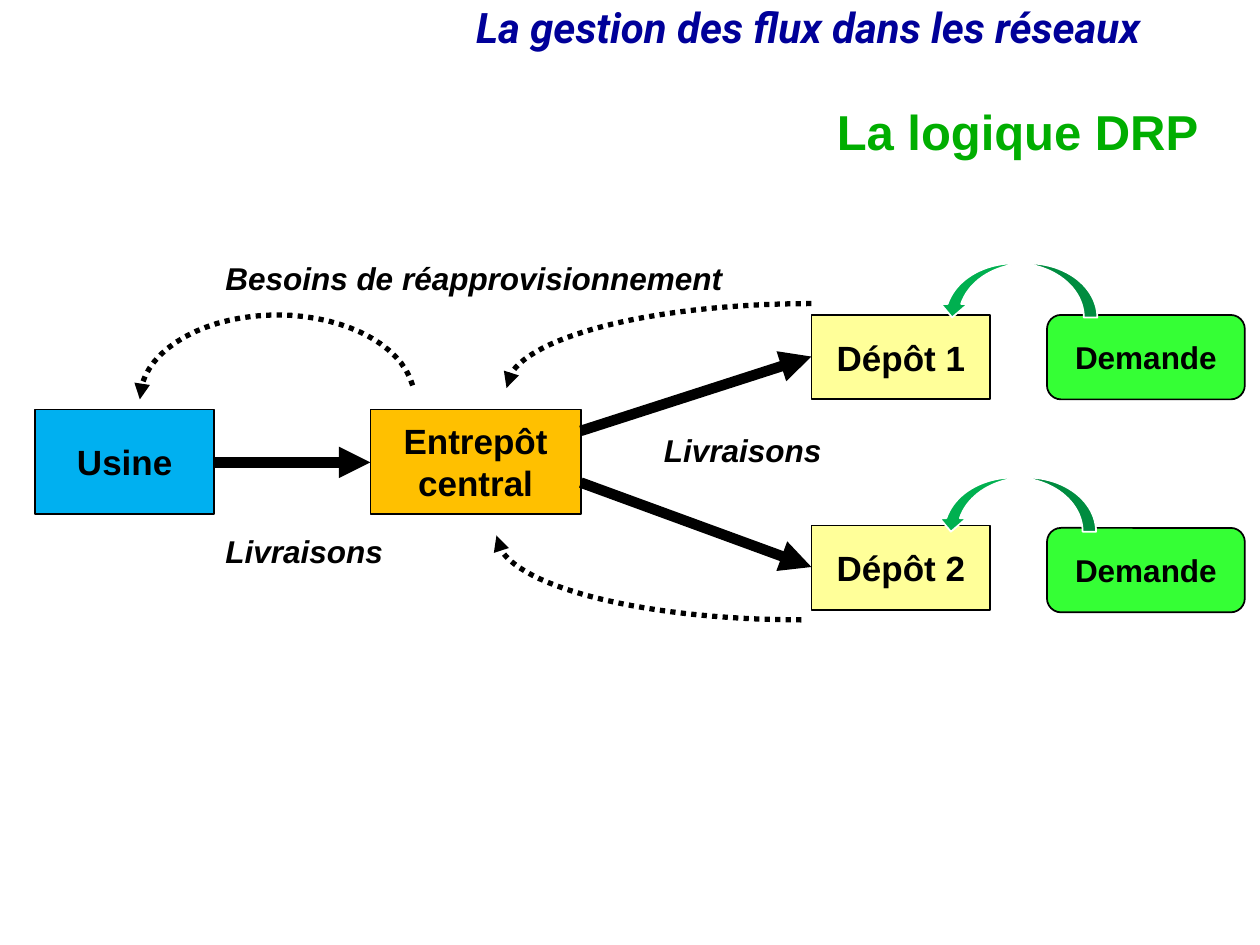
import math

import lxml.etree
import pptx
import pptx.dml.color
import pptx.enum.dml
import pptx.enum.shapes
import pptx.enum.text
import pptx.oxml.ns
import pptx.util

Inches = pptx.util.Inches
RGBColor = pptx.dml.color.RGBColor
Shapes = pptx.enum.shapes.MSO_SHAPE
Align = pptx.enum.text.PP_ALIGN

BLACK = RGBColor(0x00, 0x00, 0x00)
WHITE = RGBColor(0xFF, 0xFF, 0xFF)
NAVY = RGBColor(0x00, 0x00, 0x99)
TITLE_GREEN = RGBColor(0x00, 0xAE, 0x00)
ARROW_GREEN = RGBColor(0x00, 0xB0, 0x50)
DEMAND_GREEN = RGBColor(0x35, 0xFF, 0x35)
YELLOW = RGBColor(0xFF, 0xFF, 0x99)
ORANGE = RGBColor(0xFF, 0xC0, 0x00)
BLUE = RGBColor(0x00, 0xB0, 0xF0)


class FlowSlide:
    font_name = "Arial"
    arc_steps = 32

    def __init__(self, slide):
        self.slide = slide

    def set_text(self, text_frame, text, size, color=BLACK, italic=False,
                 align=Align.LEFT, font_name=None, line_spacing=None):
        text_frame.text = text
        for paragraph in text_frame.paragraphs:
            paragraph.alignment = align
            if line_spacing:
                paragraph.line_spacing = line_spacing
            paragraph.font.name = font_name or self.font_name
            paragraph.font.size = pptx.util.Pt(size)
            paragraph.font.bold = True
            paragraph.font.italic = italic
            paragraph.font.color.rgb = color

    def title(self, text, left, top, width, height):
        title = self.slide.shapes.title
        title.left, title.top = Inches(left), Inches(top)
        title.width, title.height = Inches(width), Inches(height)
        title.text_frame.auto_size = pptx.enum.text.MSO_AUTO_SIZE.NONE
        title.text_frame.vertical_anchor = pptx.enum.text.MSO_ANCHOR.MIDDLE
        self.set_text(title.text_frame, text, 28, TITLE_GREEN,
                      align=Align.RIGHT, line_spacing=0.9)

    def label(self, text, left, top, width, height, size=18, wrap=False, **style):
        box = self.slide.shapes.add_textbox(
            Inches(left), Inches(top), Inches(width), Inches(height))
        box.text_frame.word_wrap = wrap
        self.set_text(box.text_frame, text, size, italic=True, **style)

    def shape(self, kind, left, top, width, height, fill, line=BLACK):
        shape = self.slide.shapes.add_shape(
            kind, Inches(left), Inches(top), Inches(width), Inches(height))
        shape.shadow.inherit = False
        shape.fill.solid()
        shape.fill.fore_color.rgb = fill
        shape.line.color.rgb = line
        shape.line.width = pptx.util.Pt(1)
        return shape

    def box(self, text, left, top, width, height, fill,
            kind=Shapes.RECTANGLE, size=20, wrap=False):
        shape = self.shape(kind, left, top, width, height, fill)
        shape.text_frame.word_wrap = wrap
        shape.text_frame.vertical_anchor = pptx.enum.text.MSO_ANCHOR.MIDDLE
        self.set_text(shape.text_frame, text, size, align=Align.CENTER)

    def curved_arrow(self, left, top):
        shape = self.shape(Shapes.CURVED_DOWN_ARROW, left, top, 1.26, 0.43,
                           ARROW_GREEN, WHITE)
        shape._element.spPr.xfrm.set("flipH", "1")

    def arrow_line(self, line, width):
        line.color.rgb = BLACK
        line.width = pptx.util.Pt(width)
        lxml.etree.SubElement(line._get_or_add_ln(),
                              pptx.oxml.ns.qn("a:tailEnd"), type="triangle")

    def delivery(self, start, end):
        connector = self.slide.shapes.add_connector(
            pptx.enum.shapes.MSO_CONNECTOR.STRAIGHT,
            *(Inches(value) for value in start + end))
        self.arrow_line(connector.line, 6)
        lxml.etree.SubElement(connector._element.spPr,
                              pptx.oxml.ns.qn("a:effectLst"))

    def requirement(self, center, radii, start, end):
        points = []
        for step in range(self.arc_steps + 1):
            angle = math.radians(start + (end - start) * step / self.arc_steps)
            points.append((Inches(center[0] + radii[0] * math.cos(angle)),
                           Inches(center[1] - radii[1] * math.sin(angle))))
        builder = self.slide.shapes.build_freeform(*points[0])
        builder.add_line_segments(points[1:], close=False)
        arc = builder.convert_to_shape()
        arc.shadow.inherit = False
        arc.fill.background()
        arc.line.dash_style = pptx.enum.dml.MSO_LINE.ROUND_DOT
        self.arrow_line(arc.line, 3)


def main():
    presentation = pptx.Presentation()
    presentation.slide_width = Inches(10)
    presentation.slide_height = Inches(7.5)
    flow = FlowSlide(presentation.slides.add_slide(presentation.slide_layouts[5]))

    flow.label("La gestion des flux dans les réseaux", 3.68, 0.01, 6.34, 0.46,
               size=24, wrap=True, color=NAVY, font_name="Roboto", line_spacing=0.9)
    flow.title("La logique DRP", 1.69, 0.82, 7.92, 0.5)

    for name, top in (("Dépôt 1", 2.5), ("Dépôt 2", 4.17)):
        flow.box(name, 6.44, top, 1.42, 0.67, YELLOW)
    flow.box("Entrepôt\ncentral", 2.94, 3.25, 1.67, 0.83, ORANGE)
    flow.box("Usine", 0.28, 3.25, 1.42, 0.83, BLUE)

    for start, end in (((4.61, 3.42), (6.44, 2.83)),
                       ((4.61, 3.83), (6.44, 4.5)),
                       ((1.69, 3.67), (2.94, 3.67))):
        flow.delivery(start, end)

    flow.requirement((6.44, 3.08), (2.42, 0.67), 90, 180)
    flow.requirement((6.36, 4.25), (2.42, 0.67), 270, 180)
    flow.requirement((2.2, 3.17), (1.09, 0.67), 9.5, 180)

    flow.label("Besoins de réapprovisionnement", 1.69, 2.01, 4.15, 0.4)
    for left, top in ((5.17, 3.37), (1.69, 4.17)):
        flow.label("Livraisons", left, top, 1.45, 0.4)

    for top in (2.5, 4.19):
        flow.box("Demande", 8.31, top, 1.57, 0.67, DEMAND_GREEN,
                 kind=Shapes.ROUNDED_RECTANGLE, size=18, wrap=True)
    for left, top in ((7.45, 2.09), (7.44, 3.79)):
        flow.curved_arrow(left, top)

    presentation.save("out.pptx")


if __name__ == "__main__":
    main()
